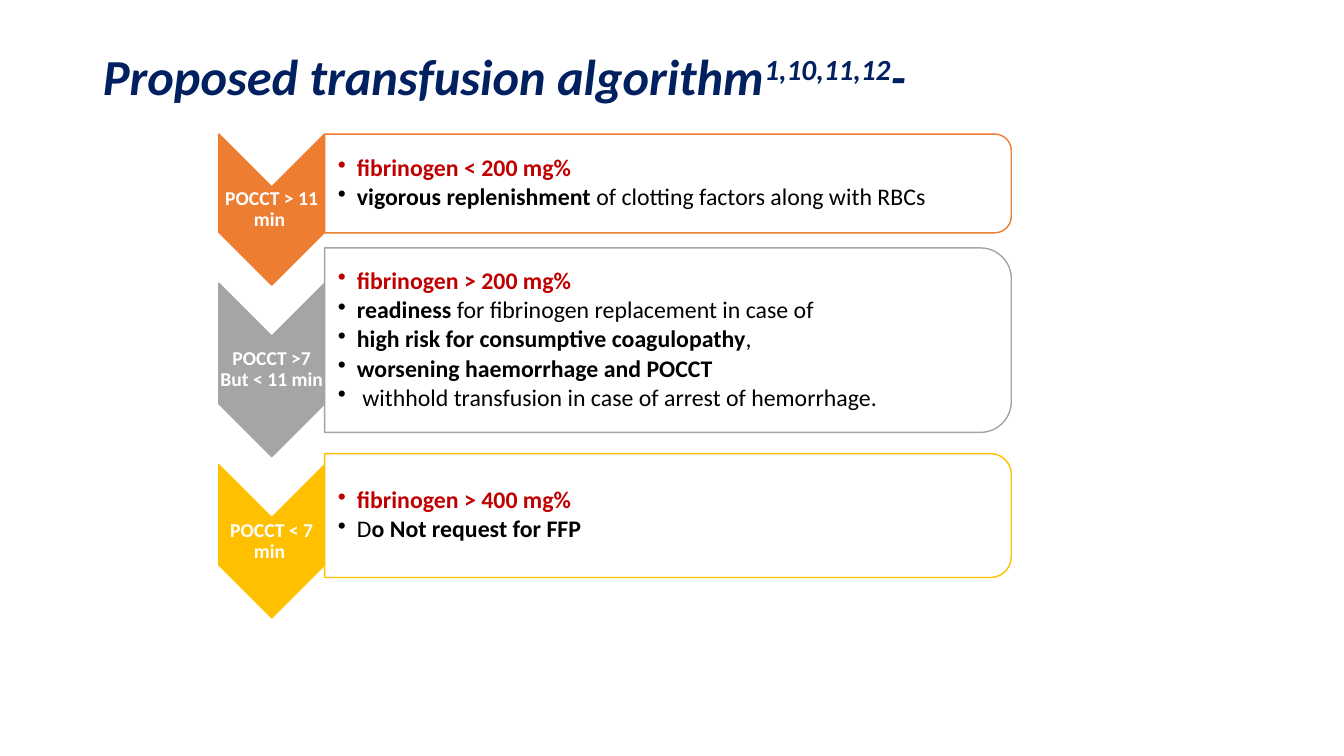
import pptx
import pptx.util
import pptx.dml.color
import pptx.enum.shapes
import pptx.enum.text
import pptx.oxml.ns
import lxml.etree

Inches = pptx.util.Inches
Pt = pptx.util.Pt
RGB = pptx.dml.color.RGBColor.from_string
qn = pptx.oxml.ns.qn
MSO = pptx.enum.shapes.MSO_SHAPE
ALIGN = pptx.enum.text.PP_ALIGN
MIDDLE = pptx.enum.text.MSO_ANCHOR.MIDDLE

THEME = {
    "font": "Calibri",
    "title": "002060", "accent": "C00000", "text": "000000", "white": "FFFFFF",
    "orange": "ED7D31", "grey": "A5A5A5", "yellow": "FFC000",
    "title_size": 36, "body_size": 17, "label_size": 14,
}


def add_run(p, text, size="body_size", color="text", bold=False, italic=False, baseline=None):
    r = p.add_run()
    r.text = text
    r.font.name = THEME["font"]
    r.font.size = Pt(THEME[size])
    r.font.bold = bold
    r.font.italic = italic
    r.font.color.rgb = RGB(THEME[color])
    if baseline:
        r._r.get_or_add_rPr().set("baseline", str(baseline))


def add_turned(s, kind, left, top, width, height, fill, line):
    x = left + (width - height) / 2
    y = top + (height - width) / 2
    sp = s.shapes.add_shape(kind, Inches(x), Inches(y), Inches(height), Inches(width))
    sp.rotation = 90
    sp.shadow.inherit = False
    sp.fill.solid()
    sp.fill.fore_color.rgb = RGB(THEME[fill])
    sp.line.color.rgb = RGB(THEME[line])
    sp.line.width = Pt(1)
    return sp


prs = pptx.Presentation()
prs.slide_width = Inches(13.33)
prs.slide_height = Inches(7.5)
s = prs.slides.add_slide(prs.slide_layouts[5])

title = s.shapes.title
title.left, title.top, title.width, title.height = map(Inches, (0.92, 0.4, 11.33, 0.77))
tf = title.text_frame
tf.vertical_anchor = MIDDLE
p = tf.paragraphs[0]
p.alignment = ALIGN.LEFT
p.line_spacing = 0.9
for text, baseline in (("Proposed transfusion algorithm", None), ("1,10,11,12", 30000), ("-", None)):
    add_run(p, text, size="title_size", color="title", bold=True, italic=True, baseline=baseline)

steps = [
    {"color": "orange", "label": "POCCT > 11 min ", "level": "fibrinogen < 200 mg%",
     "chevron": (1.33, 1.5), "panel": (1.33, 0.98),
     "actions": [[("vigorous replenishment ", True), ("of clotting factors along with RBCs", False)]]},
    {"color": "grey", "label": "POCCT >7 But < 11 min ", "level": "fibrinogen > 200 mg%",
     "chevron": (2.81, 1.72), "panel": (2.46, 1.83),
     "actions": [[("readiness ", True), ("for fibrinogen replacement in case of", False)],
                 [("high risk for consumptive coagulopathy", True), (",", False)],
                 [("worsening haemorrhage and POCCT", True)],
                 [(" withhold transfusion in case of arrest of hemorrhage.", False)]]},
    {"color": "yellow", "label": "POCCT < 7 min ", "level": "fibrinogen > 400 mg%",
     "chevron": (4.61, 1.52), "panel": (4.5, 1.23),
     "actions": [[("D", False), ("o Not request for FFP", True)]]},
]
chevron_left, chevron_width = 2.17, 1.05
panel_left, panel_width = 3.22, 6.81

for step in steps:
    color = step["color"]
    top, height = step["chevron"]
    add_turned(s, MSO.CHEVRON, chevron_left, top, chevron_width, height, color, color)
    inner = height - chevron_width
    label = s.shapes.add_textbox(Inches(chevron_left), Inches(top + chevron_width / 2),
                                 Inches(chevron_width), Inches(inner))

    top, height = step["panel"]
    panel = add_turned(s, MSO.ROUND_2_SAME_RECTANGLE, panel_left, top, panel_width, height, "white", color)
    tint = panel._element.spPr.find(qn("a:solidFill"))[0]
    lxml.etree.SubElement(tint, qn("a:alpha")).set("val", "90000")
    body = s.shapes.add_textbox(Inches(panel_left), Inches(top + 0.05),
                                Inches(panel_width - 0.06), Inches(height - 0.1))

    for box, inset in ((label, 0.01), (body, 0.13)):
        tf = box.text_frame
        tf.word_wrap = True
        tf.vertical_anchor = MIDDLE
        tf.margin_left = Inches(inset)
        tf.margin_right = tf.margin_top = tf.margin_bottom = Inches(0.01)

    p = label.text_frame.paragraphs[0]
    p.alignment = ALIGN.CENTER
    p.line_spacing = 0.9
    add_run(p, step["label"], size="label_size", color="white", bold=True)

    tf = body.text_frame
    for i, runs in enumerate([[(step["level"], True)]] + step["actions"]):
        p = tf.add_paragraph() if i else tf.paragraphs[0]
        p.level = 1
        p.line_spacing = 0.9
        p.space_after = Pt(2.5)
        pPr = p._p.get_or_add_pPr()
        pPr.set("marL", str(Inches(0.19)))
        pPr.set("indent", str(Inches(-0.19)))
        lxml.etree.SubElement(pPr, qn("a:buChar")).set("char", "•")
        for text, bold in runs:
            add_run(p, text, color="text" if i else "accent", bold=bold)

prs.save("out.pptx")
